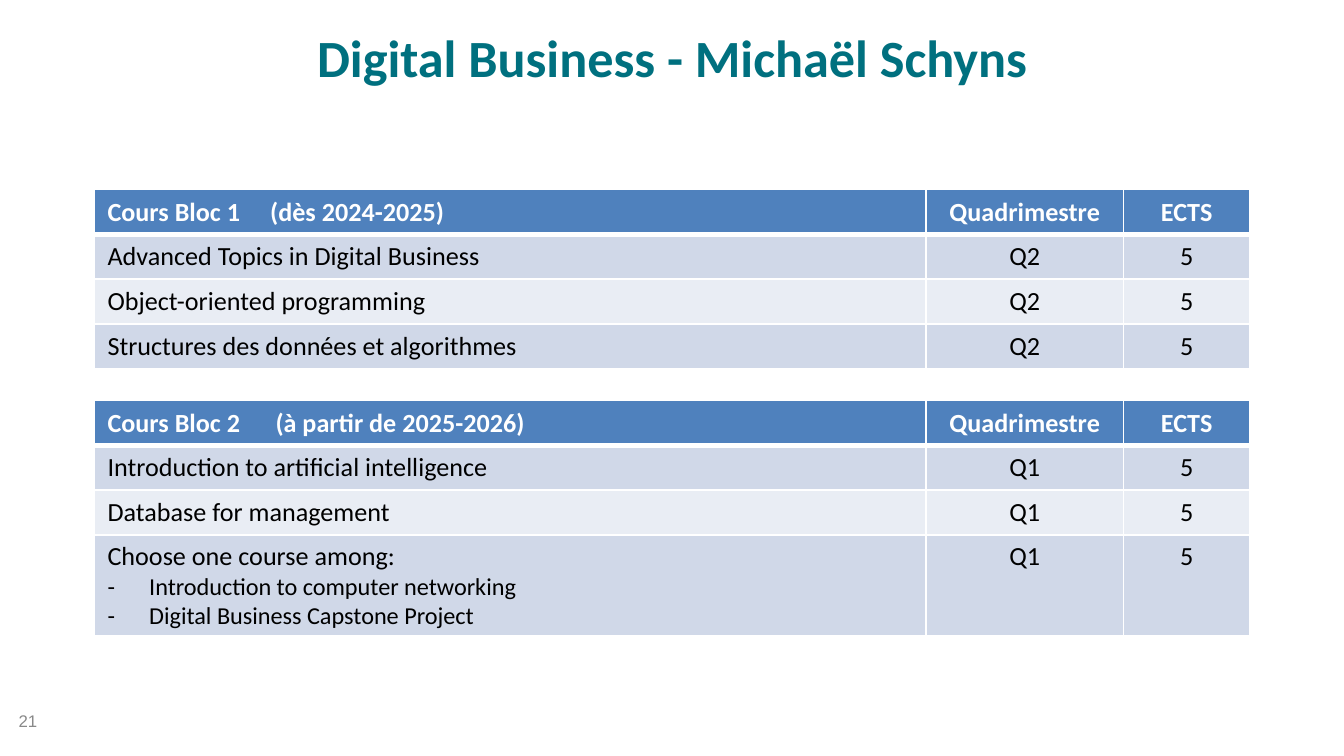
import dataclasses

import lxml.etree
import pptx
import pptx.dml.color
import pptx.enum.text
import pptx.oxml.ns
import pptx.util

Inches = pptx.util.Inches
ALIGN = pptx.enum.text.PP_ALIGN
ANCHOR = pptx.enum.text.MSO_ANCHOR


@dataclasses.dataclass(frozen=True)
class Theme:
    font: str = "Calibri"
    number_font: str = "Arial"
    title_color: str = "00707F"
    number_color: str = "898989"
    header_fill: str = "4F81BD"
    band_fills: tuple = ("D0D8E8", "E9EDF4")
    white: str = "FFFFFF"
    black: str = "000000"
    title_size: int = 28
    body_size: int = 14
    option_size: int = 13
    number_size: int = 9


THEME = Theme()
COLUMN_WIDTHS = (6.19, 1.47, 0.94)
ROW_HEIGHT = 0.33

BLOCKS = [
    {
        "top": 1.41,
        "title": "Cours Bloc 1\t(dès 2024-2025)",
        "tab": 1.21,
        "term": "Q2",
        "courses": [
            ["Advanced Topics in Digital Business"],
            ["Object-oriented programming"],
            ["Structures des données et algorithmes"],
        ],
    },
    {
        "top": 2.98,
        "title": "Cours Bloc 2\t(à partir de 2025-2026)",
        "tab": 1.25,
        "term": "Q1",
        "courses": [
            ["Introduction to artificial intelligence"],
            ["Database for management"],
            ["Choose one course among:", "Introduction to computer networking",
             "Digital Business Capstone Project"],
        ],
    },
]


def rgb(color):
    return pptx.dml.color.RGBColor.from_string(color)


def add_xml(parent, tag, **attributes):
    return lxml.etree.SubElement(parent, pptx.oxml.ns.qn(tag), attributes)


def write(paragraph, text, size=THEME.body_size, color=THEME.black, bold=False,
          font=THEME.font, align=ALIGN.LEFT, dash=False, tab=None):
    paragraph.alignment = align
    properties = paragraph._p.get_or_add_pPr()
    if dash:
        properties.set("marL", str(Inches(0.31)))
        properties.set("indent", str(-Inches(0.31)))
        add_xml(properties, "a:buFont", typeface=font)
        add_xml(properties, "a:buChar", char="-")
    if tab:
        stops = add_xml(properties, "a:tabLst")
        add_xml(stops, "a:tab", pos=str(Inches(tab)), algn="l")
    run = paragraph.add_run()
    run.text = text
    run.font.name = font
    run.font.size = pptx.util.Pt(size)
    run.font.bold = bold
    run.font.color.rgb = rgb(color)


def add_label(slide, text, left, top, width, height, anchor, **style):
    frame = slide.shapes.add_textbox(
        Inches(left), Inches(top), Inches(width), Inches(height)).text_frame
    frame.word_wrap = True
    frame.vertical_anchor = anchor
    write(frame.paragraphs[0], text, **style)


def style_cell(cell, fill, top_border=1, bottom_border=1):
    properties = cell._tc.get_or_add_tcPr()
    borders = {"L": 1, "R": 1, "T": top_border, "B": bottom_border}
    for side, width in borders.items():
        line = add_xml(properties, f"a:ln{side}", w=str(pptx.util.Pt(width)))
        add_xml(add_xml(line, "a:solidFill"), "a:srgbClr", val=THEME.white)
    cell.fill.solid()
    cell.fill.fore_color.rgb = rgb(fill)


def fill_header(table, block):
    for column, text in enumerate((block["title"], "Quadrimestre", "ECTS")):
        cell = table.cell(0, column)
        style_cell(cell, THEME.header_fill, bottom_border=3)
        write(cell.text_frame.paragraphs[0], text, color=THEME.white, bold=True,
              align=ALIGN.CENTER if column else ALIGN.LEFT,
              tab=None if column else block["tab"])


def fill_course(table, row, course, term):
    name, *options = course
    fill = THEME.band_fills[(row - 1) % 2]
    for column in range(len(COLUMN_WIDTHS)):
        cell = table.cell(row, column)
        style_cell(cell, fill, top_border=3 if row == 1 else 1)
        if options:
            cell.margin_top = cell.margin_bottom = Inches(0.04)
    frame = table.cell(row, 0).text_frame
    write(frame.paragraphs[0], name)
    for option in options:
        write(frame.add_paragraph(), option, size=THEME.option_size, dash=True)
    for column, text in enumerate((term, "5"), start=1):
        write(table.cell(row, column).text_frame.paragraphs[0], text,
              align=ALIGN.CENTER)


def add_course_table(slide, block):
    courses = block["courses"]
    row_count = len(courses) + 1
    table = slide.shapes.add_table(
        row_count, len(COLUMN_WIDTHS), Inches(0.7), Inches(block["top"]),
        Inches(sum(COLUMN_WIDTHS)), Inches(ROW_HEIGHT * row_count)).table
    table.horz_banding = False
    for column, width in zip(table.columns, COLUMN_WIDTHS):
        column.width = Inches(width)
    for row in table.rows:
        row.height = Inches(ROW_HEIGHT)
    if len(courses[-1]) > 1:
        table.rows[row_count - 1].height = Inches(0.75)
    fill_header(table, block)
    for row, course in enumerate(courses, start=1):
        fill_course(table, row, course, block["term"])


def main():
    presentation = pptx.Presentation()
    presentation.slide_width = Inches(10)
    presentation.slide_height = presentation.slide_width * 9 // 16
    slide = presentation.slides.add_slide(presentation.slide_layouts[6])
    add_label(slide, "21", 0.04, 5.21, 2.33, 0.3, ANCHOR.MIDDLE,
              size=THEME.number_size, color=THEME.number_color,
              font=THEME.number_font)
    add_label(slide, "Digital Business - Michaël Schyns", 0.5, 0.14, 9, 0.62,
              ANCHOR.TOP, size=THEME.title_size, color=THEME.title_color,
              bold=True, align=ALIGN.CENTER)
    for block in BLOCKS:
        add_course_table(slide, block)
    presentation.save("out.pptx")


if __name__ == "__main__":
    main()
